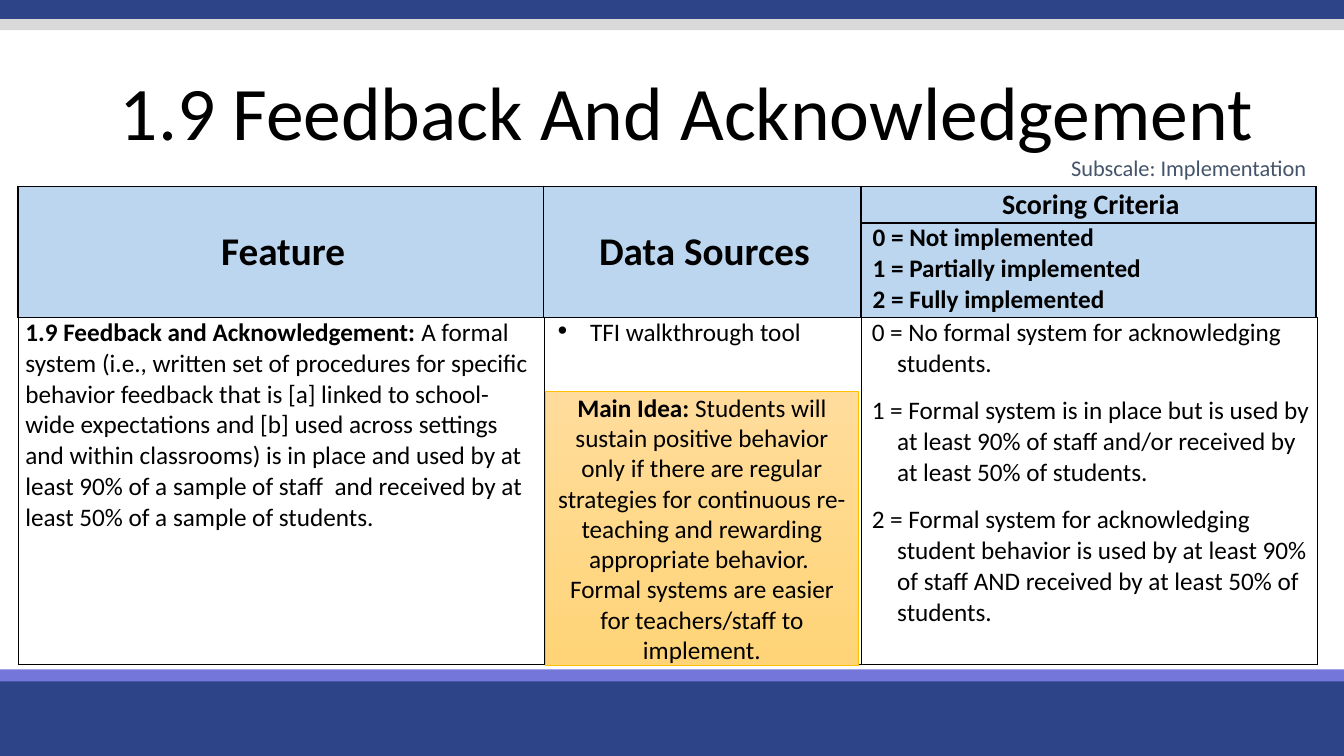
"""Build the slide on feedback and acknowledgement."""
from dataclasses import dataclass

from lxml.etree import SubElement
from pptx import Presentation
from pptx.dml.color import RGBColor
from pptx.enum.shapes import MSO_SHAPE
from pptx.enum.text import MSO_ANCHOR, PP_ALIGN
from pptx.oxml.ns import qn
from pptx.shapes.autoshape import Shape
from pptx.slide import Slide
from pptx.table import Table, _Cell
from pptx.text.text import TextFrame, _Paragraph
from pptx.util import Cm, Pt

NAVY = RGBColor(0x2E, 0x44, 0x88)
VIOLET = RGBColor(0x74, 0x76, 0xDA)
GREY = RGBColor(0xD9, 0xD9, 0xD9)
BLACK = RGBColor(0, 0, 0)
WHITE = RGBColor(0xFF, 0xFF, 0xFF)
SKY = RGBColor(0xBB, 0xD6, 0xEE)
SLATE = RGBColor(0x44, 0x54, 0x6A)
GOLD = RGBColor(0xFF, 0xC0, 0x00)
LIGHT = RGBColor(0xFF, 0xDC, 0x9B)
AMBER = RGBColor(0xFF, 0xD4, 0x78)
FONT = "Calibri"
WIDTH, HEIGHT = 33.87, 19.05
LEFT = 0.46


@dataclass
class Box:
    """A place on the slide in centimetres."""
    left: float
    top: float
    width: float
    height: float

    def cm(self) -> tuple[Cm, Cm, Cm, Cm]:
        """Give the four lengths in slide units."""
        return Cm(self.left), Cm(self.top), Cm(self.width), Cm(self.height)


@dataclass
class Band:
    """A bar across the full slide."""
    top: float
    height: float
    color: RGBColor


@dataclass
class Run:
    """A piece of text with one look."""
    text: str
    size: float = 18
    bold: bool = False
    color: RGBColor = BLACK


@dataclass
class Para:
    """A line of runs with its layout."""
    runs: list[Run]
    align: PP_ALIGN = PP_ALIGN.LEFT
    margin: float = 0
    indent: float = 0
    before: float = 0
    bullet: str = ""


@dataclass
class Field:
    """A table cell with its text and edges (left, right, top, bottom)."""
    row: int
    col: int
    paras: list[Para]
    fill: RGBColor
    edges: tuple[float, float, float, float] = (1, 1, 1, 1)
    last: int = 0
    anchor: MSO_ANCHOR = MSO_ANCHOR.TOP


BANDS = [
    Band(17.02, 2.03, NAVY),
    Band(16.87, 0.3, VIOLET),
    Band(0, 0.48, NAVY),
    Band(0.48, 0.28, GREY),
]


def head(text: str, size: float) -> list[Para]:
    """Make a centred bold heading."""
    return [Para([Run(text, size, True)], PP_ALIGN.CENTER, 0.91, -0.79)]


SCALE = ["0 = Not implemented", "1 = Partially implemented", "2 = Fully implemented"]
SCORES = [
    "0 = No formal system for acknowledging students.",
    "1 = Formal system is in place but is used by at least 90% of staff and/or "
    "received by at least 50% of students.",
    "2 = Formal system for acknowledging student behavior is used by at least 90% "
    "of staff AND received by at least 50% of students.",
]
FEATURE = [Para([
    Run("1.9 Feedback and Acknowledgement: ", bold=True),
    Run("A formal system (i.e., written set of procedures for specific behavior "
        "feedback that is [a] linked to school-wide expectations and [b] used across "
        "settings and within classrooms) is in place and used by at least 90% of a "
        "sample of staff  and received by at least 50% of a sample of students."),
])]
IDEA = [Para([
    Run("Main Idea: ", bold=True),
    Run("Students will sustain positive behavior only if there are regular strategies "
        "for continuous re-teaching and rewarding appropriate behavior.  Formal "
        "systems are easier for teachers/staff to implement."),
], PP_ALIGN.CENTER)]
SOURCE = [Para([Run("TFI walkthrough tool")], margin=0.97, indent=-0.89, bullet="∙")]
HEADS = [
    Field(0, 0, head("Feature", 28), SKY, (1.5, 1, 1.5, 1), 1, MSO_ANCHOR.MIDDLE),
    Field(0, 1, head("Data Sources", 28), SKY, (1, 1, 1.5, 1), 1, MSO_ANCHOR.MIDDLE),
    Field(0, 2, head("Scoring Criteria", 20), SKY, (1.5, 1.5, 1.5, 1.5),
          anchor=MSO_ANCHOR.MIDDLE),
    Field(1, 2, [Para([Run(text, bold=True)], margin=0.91, indent=-0.79)
                 for text in SCALE], SKY, (1, 1.5, 1.5, 1), 1),
]
BODY = [
    Field(0, 0, FEATURE, WHITE),
    Field(0, 1, SOURCE, WHITE),
    Field(0, 2, [Para([Run(text)], margin=0.71, indent=-0.64, before=12 if i else 0)
                 for i, text in enumerate(SCORES)], WHITE),
]


def style(line: _Paragraph, para: Para) -> None:
    """Set the layout of one paragraph."""
    props = line._p.get_or_add_pPr()
    props.set("marL", str(Cm(para.margin)))
    props.set("indent", str(Cm(para.indent)))
    if para.bullet:
        tint = SubElement(props, qn("a:buClr"))
        SubElement(tint, qn("a:srgbClr"), val=str(BLACK))
        SubElement(props, qn("a:buChar"), char=para.bullet)
    line.alignment = para.align
    if para.before:
        line.space_before = Pt(para.before)


def write(frame: TextFrame, paras: list[Para]) -> None:
    """Fill a text frame run by run."""
    frame.word_wrap = True
    for i, para in enumerate(paras):
        line = frame.add_paragraph() if i else frame.paragraphs[0]
        style(line, para)
        for item in para.runs:
            run = line.add_run()
            run.text = item.text
            run.font.name = FONT
            run.font.size = Pt(item.size)
            run.font.bold = item.bold
            run.font.color.rgb = item.color


def add_text(slide: Slide, box: Box, para: Para) -> TextFrame:
    """Add a text box with one paragraph."""
    frame = slide.shapes.add_textbox(*box.cm()).text_frame
    write(frame, [para])
    return frame


def add_rect(slide: Slide, box: Box) -> Shape:
    """Add a plain rectangle."""
    shape = slide.shapes.add_shape(MSO_SHAPE.RECTANGLE, *box.cm())
    shape.shadow.inherit = False
    return shape


def add_edges(cell: _Cell, edges: tuple[float, float, float, float]) -> None:
    """Draw the four cell borders ahead of the fill."""
    props = cell._tc.get_or_add_tcPr()
    for i, (side, width) in enumerate(zip("LRTB", edges)):
        line = SubElement(props, qn(f"a:ln{side}"), w=str(Pt(width)))
        fill = SubElement(line, qn("a:solidFill"))
        SubElement(fill, qn("a:srgbClr"), val=str(BLACK))
        props.insert(i, line)


def add_grid(slide: Slide, top: float, cols: list[float], rows: list[float],
             fields: list[Field]) -> Table:
    """Add a table and fill its cells."""
    box = Box(LEFT, top, sum(cols), sum(rows))
    grid = slide.shapes.add_table(len(rows), len(cols), *box.cm()).table
    grid.first_row = grid.horz_banding = False
    for col, width in zip(grid.columns, cols):
        col.width = Cm(width)
    for row, height in zip(grid.rows, rows):
        row.height = Cm(height)
    for field in fields:
        for row in range(field.row, max(field.row, field.last) + 1):
            cell = grid.cell(row, field.col)
            add_edges(cell, field.edges)
            cell.fill.solid()
            cell.fill.fore_color.rgb = field.fill
        cell = grid.cell(field.row, field.col)
        if field.last > field.row:
            cell.merge(grid.cell(field.last, field.col))
        cell.margin_left = cell.margin_right = Cm(0.18)
        cell.margin_top = cell.margin_bottom = 0
        cell.vertical_anchor = field.anchor
        write(cell.text_frame, field.paras)
    return grid


def add_idea(slide: Slide) -> None:
    """Add the shaded main idea box."""
    shape = add_rect(slide, Box(13.74, 9.86, 7.9, 6.91))
    shape.fill.gradient()
    shape.fill.gradient_angle = 270
    for stop, color, place in zip(shape.fill.gradient_stops, (LIGHT, AMBER), (0, 1)):
        stop.color.rgb = color
        stop.position = place
    shape.line.color.rgb = GOLD
    shape.line.width = Pt(0.75)
    shape.text_frame.vertical_anchor = MSO_ANCHOR.MIDDLE
    write(shape.text_frame, IDEA)


def main() -> None:
    """Build and save the deck."""
    deck = Presentation()
    deck.slide_width, deck.slide_height = Cm(WIDTH), Cm(HEIGHT)
    slide = deck.slides.add_slide(deck.slide_layouts[6])
    for band in BANDS:
        bar = add_rect(slide, Box(0, band.top, WIDTH, band.height))
        bar.fill.solid()
        bar.fill.fore_color.rgb = band.color
        bar.line.fill.background()
    title = add_text(slide, Box(0.76, 2.03, 33.1, 1.8), Para(
        [Run("1.9 Feedback And Acknowledgement", 54)], PP_ALIGN.CENTER))
    title.vertical_anchor = MSO_ANCHOR.MIDDLE
    title.paragraphs[0].line_spacing = 0.9
    add_grid(slide, 4.7, [13.23, 8, 11.48], [0.91, 2.39], HEADS)
    add_grid(slide, 8, [13.26, 8, 11.48], [8.74], BODY)
    add_idea(slide)
    add_text(slide, Box(26.64, 3.76, 6.53, 0.94), Para(
        [Run("Subscale: Implementation", 16, color=SLATE)], PP_ALIGN.RIGHT))
    deck.save("out.pptx")


if __name__ == "__main__":
    main()
